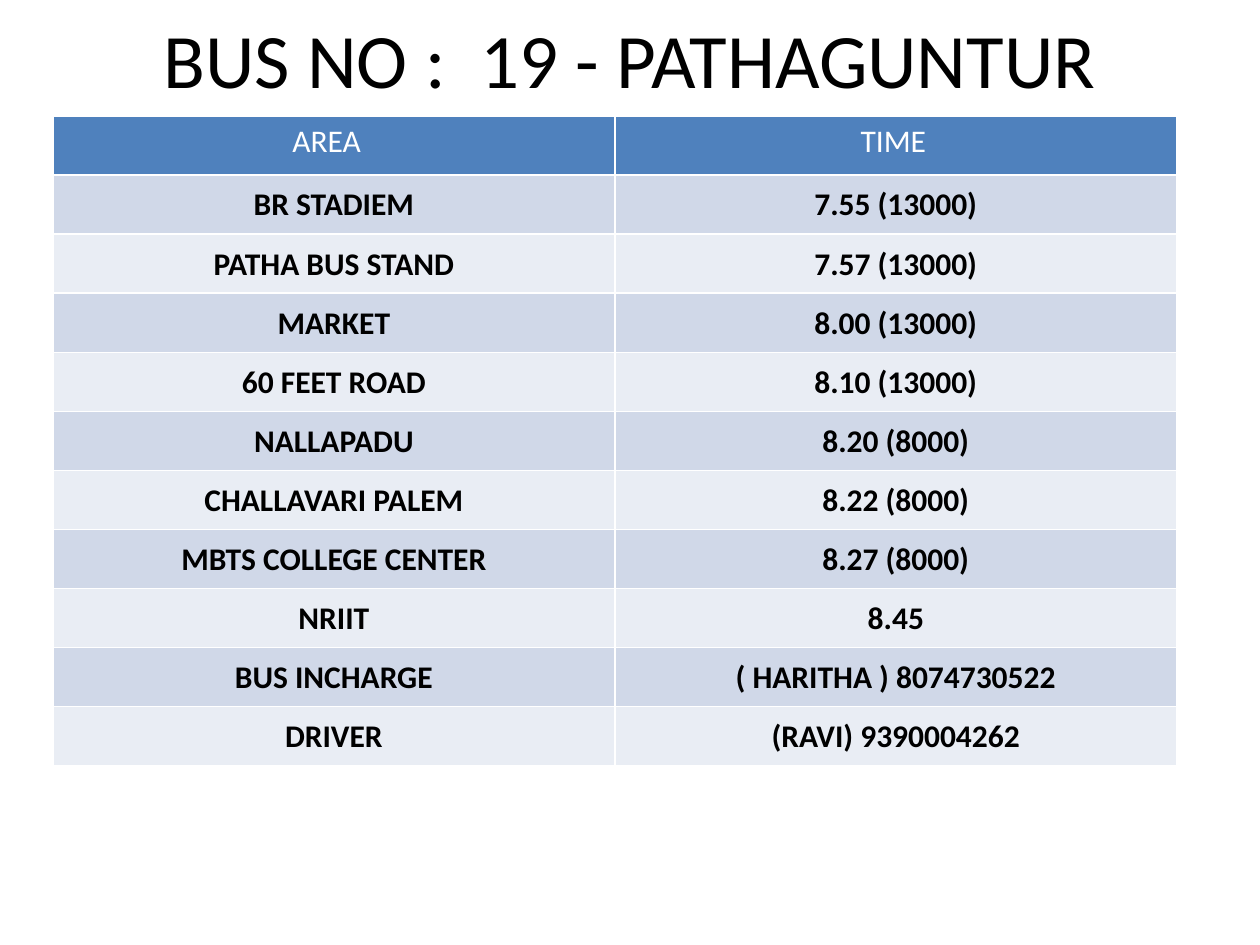
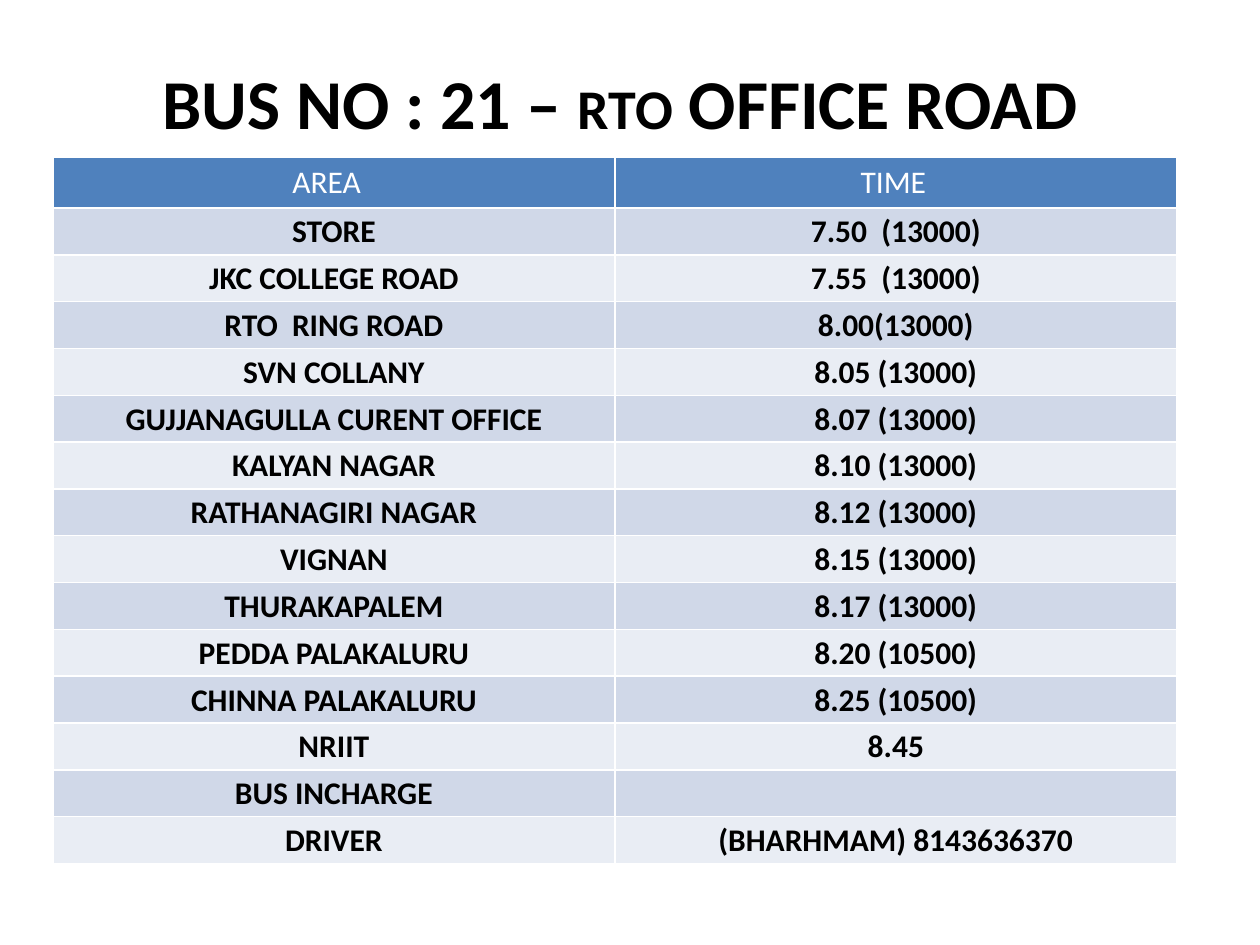
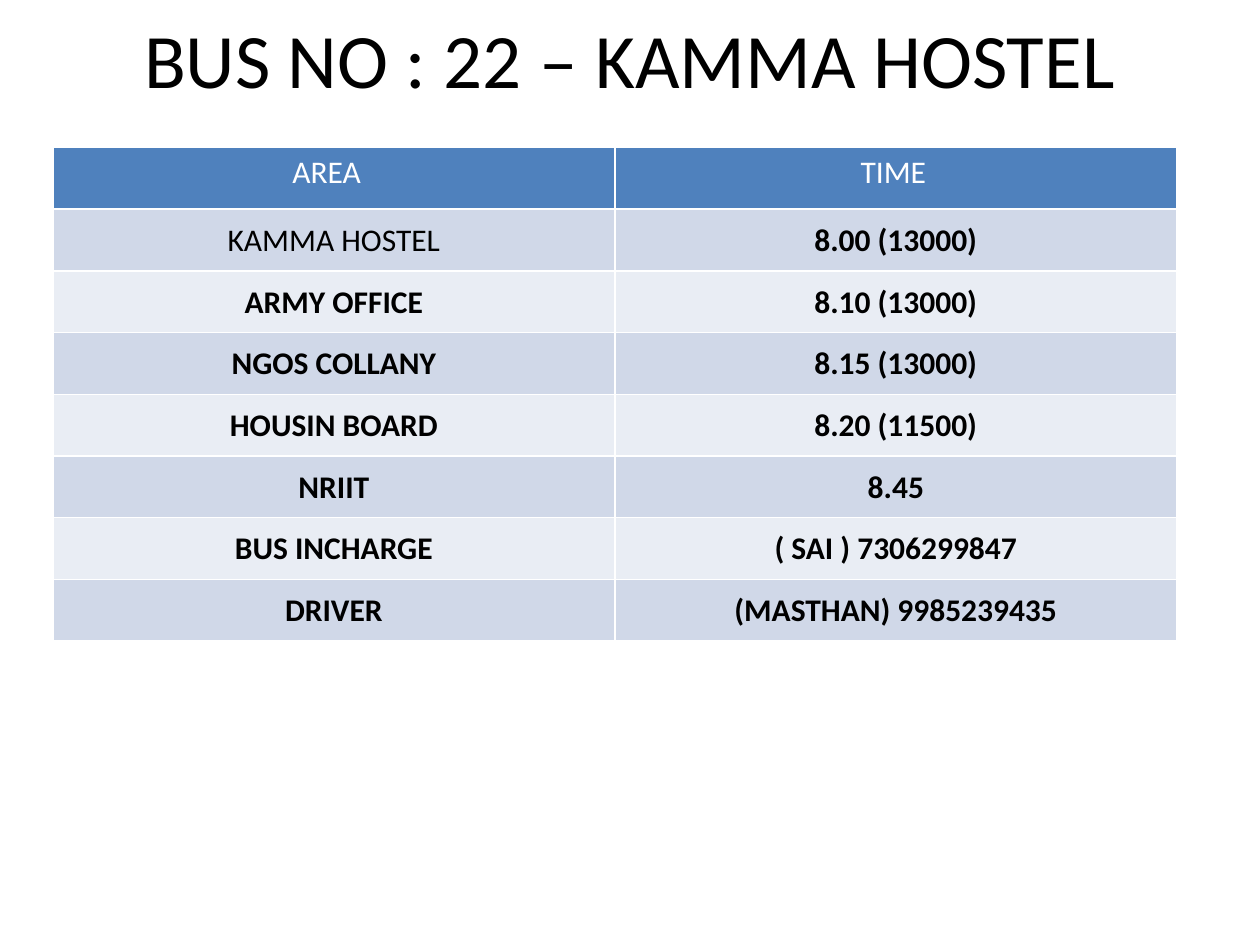
from pptx import Presentation
from pptx.dml.color import RGBColor
from pptx.enum.text import MSO_ANCHOR, PP_ALIGN
from pptx.util import Inches, Pt

CENTER = PP_ALIGN.CENTER
LEFT = PP_ALIGN.LEFT
TOP = MSO_ANCHOR.TOP
MIDDLE = MSO_ANCHOR.MIDDLE

# Shared look
FONT = "Calibri"
BLACK = RGBColor(0x00, 0x00, 0x00)
WHITE = RGBColor(0xFF, 0xFF, 0xFF)
HEADER_BLUE = RGBColor(0x4F, 0x81, 0xBD)
BANDS = [RGBColor(0xD0, 0xD8, 0xE8), RGBColor(0xE9, 0xED, 0xF4)]

# Shared grid, in inches
TABLE_LEFT = 0.42
COLUMN_WIDTH = 4.46
HEADERS = ["AREA", "TIME"]
HEADER_INDENTS = [1.9, 1.95]
TITLE_BAND = (0.75, 0, 8.5, 0.92)

HEADER_CELL = {"vertical_anchor": TOP}
BODY_CELL = {
    "vertical_anchor": MIDDLE,
    "margin_left": Inches(0.01),
    "margin_right": Inches(0.01),
    "margin_top": Inches(0.01),
    "margin_bottom": 0,
}

# One entry per bus; title runs are (text, size)
ROUTES = [
    {
        "title": [("BUS NO :  19 - PATHAGUNTUR", 44)],
        "title_box": TITLE_BAND,
        "title_anchor": MIDDLE,
        "title_bold": False,
        "table_top": 0.92,
        "table_height": 5.16,
        "regular_areas": [],
        "stops": [
            ("BR STADIEM", "7.55 (13000)"),
            ("PATHA BUS STAND", "7.57 (13000)"),
            ("MARKET", "8.00 (13000)"),
            ("60 FEET ROAD", "8.10 (13000)"),
            ("NALLAPADU", "8.20 (8000)"),
            ("CHALLAVARI PALEM", "8.22 (8000)"),
            ("MBTS COLLEGE CENTER", "8.27 (8000)"),
            ("NRIIT", "8.45"),
            ("BUS INCHARGE", "( HARITHA ) 8074730522"),
            ("DRIVER", "(RAVI) 9390004262"),
        ],
    },
    {
        "title": [("BUS NO : 21 – ", 40), ("RTO", 32), (" OFFICE ROAD", 40)],
        "title_box": (0.92, 0.42, 8, 0.77),
        "title_anchor": TOP,
        "title_bold": True,
        "table_top": 1.25,
        "table_height": 5.58,
        "regular_areas": [],
        "stops": [
            ("STORE", "7.50  (13000)"),
            ("JKC COLLEGE ROAD", "7.55  (13000)"),
            ("RTO  RING ROAD", "8.00(13000)"),
            ("SVN COLLANY", "8.05 (13000)"),
            ("GUJJANAGULLA CURENT OFFICE", "8.07 (13000)"),
            ("KALYAN NAGAR", "8.10 (13000)"),
            ("RATHANAGIRI NAGAR", "8.12 (13000)"),
            ("VIGNAN", "8.15 (13000)"),
            ("THURAKAPALEM", "8.17 (13000)"),
            ("PEDDA PALAKALURU", "8.20 (10500)"),
            ("CHINNA PALAKALURU", "8.25 (10500)"),
            ("NRIIT", "8.45"),
            ("BUS INCHARGE", ""),
            ("DRIVER", "(BHARHMAM) 8143636370"),
        ],
    },
    {
        "title": [("BUS NO : 22 – KAMMA HOSTEL", 44)],
        "title_box": TITLE_BAND,
        "title_anchor": MIDDLE,
        "title_bold": False,
        "table_top": 1.17,
        "table_height": 3.92,
        "regular_areas": ["KAMMA HOSTEL"],
        "stops": [
            ("KAMMA HOSTEL", "8.00 (13000)"),
            ("ARMY OFFICE", "8.10 (13000)"),
            ("NGOS COLLANY", "8.15 (13000)"),
            ("HOUSIN BOARD", "8.20 (11500)"),
            ("NRIIT", "8.45"),
            ("BUS INCHARGE", "( SAI ) 7306299847"),
            ("DRIVER", "(MASTHAN) 9985239435"),
        ],
    },
]


def add_run(paragraph, text, size, color, bold):
    run = paragraph.add_run()
    run.text = text
    for name, value in {"name": FONT, "size": Pt(size), "bold": bold}.items():
        setattr(run.font, name, value)
    run.font.color.rgb = color


def fill_cell(cell, text, fill, color, bold, alignment, cell_format):
    cell.fill.solid()
    cell.fill.fore_color.rgb = fill
    for name, value in cell_format.items():
        setattr(cell, name, value)
    paragraph = cell.text_frame.paragraphs[0]
    paragraph.alignment = alignment
    if text:
        add_run(paragraph, text, 18, color, bold)


presentation = Presentation()
presentation.slide_width = Inches(10)
presentation.slide_height = Inches(7.5)
blank_layout = presentation.slide_layouts[6]

for route in ROUTES:
    slide = presentation.slides.add_slide(blank_layout)

    # Title
    title = slide.shapes.add_textbox(*[Inches(length) for length in route["title_box"]])
    title.text_frame.word_wrap = True
    title.text_frame.vertical_anchor = route["title_anchor"]
    paragraph = title.text_frame.paragraphs[0]
    paragraph.alignment = CENTER
    for text, size in route["title"]:
        add_run(paragraph, text, size, BLACK, route["title_bold"])

    # Timetable with equal rows
    row_count = len(route["stops"]) + 1
    table = slide.shapes.add_table(
        row_count, len(HEADERS), Inches(TABLE_LEFT), Inches(route["table_top"]),
        Inches(COLUMN_WIDTH * len(HEADERS)), Inches(route["table_height"]),
    ).table

    # Header row
    for column, (header, indent) in enumerate(zip(HEADERS, HEADER_INDENTS)):
        header_format = {**HEADER_CELL, "margin_left": Inches(indent)}
        fill_cell(table.cell(0, column), header, HEADER_BLUE, WHITE, False, LEFT, header_format)

    # Stops and contacts in alternating bands
    for row, stop in enumerate(route["stops"], start=1):
        band = BANDS[(row - 1) % len(BANDS)]
        for column, text in enumerate(stop):
            bold = text not in route["regular_areas"]
            fill_cell(table.cell(row, column), text, band, BLACK, bold, CENTER, BODY_CELL)

presentation.save("out.pptx")
